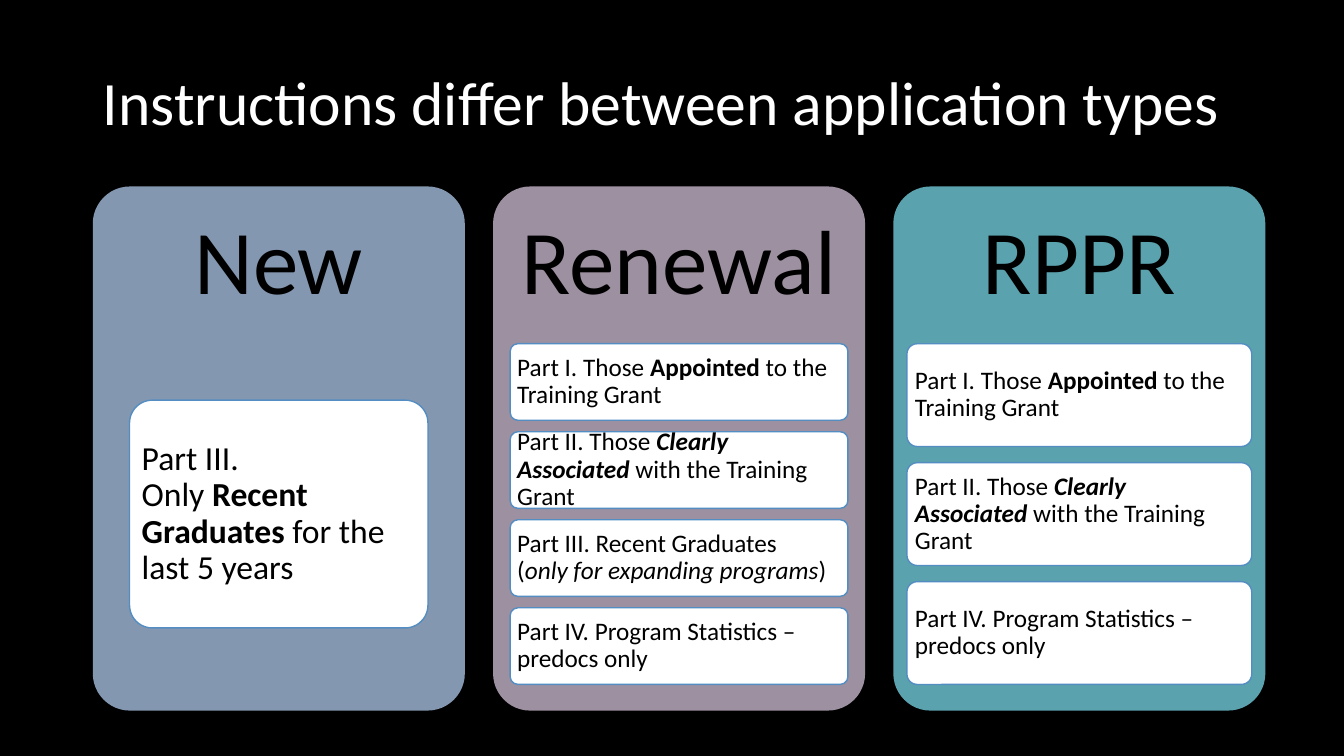
from pptx import Presentation
from pptx.dml.color import RGBColor
from pptx.enum.shapes import MSO_SHAPE as Shape
from pptx.enum.text import MSO_ANCHOR as Anchor, MSO_AUTO_SIZE as AutoSize, PP_ALIGN as Align
from pptx.util import Inches, Pt

COLORS = {
    "background": "000000",
    "title": "FFFFFF",
    "text": "000000",
    "box": "FFFFFF",
    "outline": "538DC1",
    "new": "8497B0",
    "renewal": "9D90A0",
    "rppr": "5AA2AE",
}
FONT = "Calibri"
CORNER = 0.1
CARD_LEFT, CARD_TOP, CARD_PITCH = 0.92, 1.85, 3.97
CARD_WIDTH, CARD_HEIGHT = 3.69, 5.2

APPOINTED = [("Part I. Those ", ""), ("Appointed", "b"), (" to the Training Grant", "")]
ASSOCIATED = [("Part II. Those ", ""), ("Clearly Associated ", "bi"),
              ("with the Training Grant", "")]
GRADUATES = [("Part III. Recent Graduates ", ""), ("\n", ""), ("(", ""),
             ("only for expanding programs", "i"), (")", "")]
STATISTICS = [("Part IV. Program Statistics – predocs only", "")]
RECENT = [("Part III. ", ""), ("\n", ""), ("Only ", ""),
          ("Recent Graduates ", "b"), ("for the last 5 years", "")]

CARDS = [
    {"name": "New", "color": "new", "items": [RECENT], "size": 24,
     "width": 2.96, "height": 2.26, "top": 3.97, "bottom": 6.23, "padding": (0.12, 0.11)},
    {"name": "Renewal", "color": "renewal", "size": 18,
     "items": [APPOINTED, ASSOCIATED, GRADUATES, STATISTICS],
     "width": 3.35, "height": 0.76, "top": 3.41, "bottom": 6.79, "padding": (0.07, 0.06)},
    {"name": "RPPR", "color": "rppr", "size": 18,
     "items": [APPOINTED, ASSOCIATED, STATISTICS],
     "width": 3.42, "height": 1.02, "top": 3.41, "bottom": 6.79, "padding": (0.08, 0.07)},
]


def color(name):
    return RGBColor.from_string(COLORS[name])


def write(frame, spans, size, ink, align=Align.LEFT):
    frame.word_wrap = True
    frame.auto_size = AutoSize.NONE
    frame.vertical_anchor = Anchor.MIDDLE
    para = frame.paragraphs[0]
    para.alignment = align
    para.line_spacing = 0.9
    for text, style in spans:
        if text == "\n":
            para.add_line_break()
            continue
        span = para.add_run()
        span.text = text
        span.font.name = FONT
        span.font.size = Pt(size)
        span.font.bold = "b" in style
        span.font.italic = "i" in style
        span.font.color.rgb = color(ink)


def add_rounded(page, left, top, width, height, fill, padding):
    box = page.shapes.add_shape(Shape.ROUNDED_RECTANGLE, Inches(left), Inches(top),
                                Inches(width), Inches(height))
    box.adjustments[0] = CORNER
    box.shadow.inherit = False
    box.fill.solid()
    box.fill.fore_color.rgb = color(fill)
    corner_inset = CORNER * min(width, height) * 0.29
    frame = box.text_frame
    frame.margin_left, frame.margin_top, frame.margin_right, frame.margin_bottom = (
        Inches(side - corner_inset) for side in padding)
    return box


def add_card(page, left, card):
    panel = add_rounded(page, left, CARD_TOP, CARD_WIDTH, CARD_HEIGHT,
                        card["color"], (0.27, 0.27, 0.27, 3.91))
    panel.line.fill.background()
    write(panel.text_frame, [(card["name"], "")], 65, "text", Align.CENTER)

    items, height = card["items"], card["height"]
    pitch = (card["bottom"] - card["top"] - height) / max(len(items) - 1, 1)
    box_left = left + (CARD_WIDTH - card["width"]) / 2
    for row, spans in enumerate(items):
        box = add_rounded(page, box_left, card["top"] + row * pitch,
                          card["width"], height, "box", card["padding"] * 2)
        box.line.color.rgb = color("outline")
        box.line.width = Pt(1)
        write(box.text_frame, spans, card["size"], "text")


def set_title(page, text):
    title = page.shapes.title
    title.left, title.top = Inches(0.92), Inches(0.4)
    title.width, title.height = Inches(11.5), Inches(1.29)
    write(title.text_frame, [(text, "")], 44, "title")


def main():
    deck = Presentation()
    deck.slide_width, deck.slide_height = Inches(13.33), Inches(7.5)
    page = deck.slides.add_slide(deck.slide_layouts[5])
    page.background.fill.solid()
    page.background.fill.fore_color.rgb = color("background")
    set_title(page, "Instructions differ between application types")
    for column, card in enumerate(CARDS):
        add_card(page, CARD_LEFT + column * CARD_PITCH, card)
    deck.save("out.pptx")


if __name__ == "__main__":
    main()
